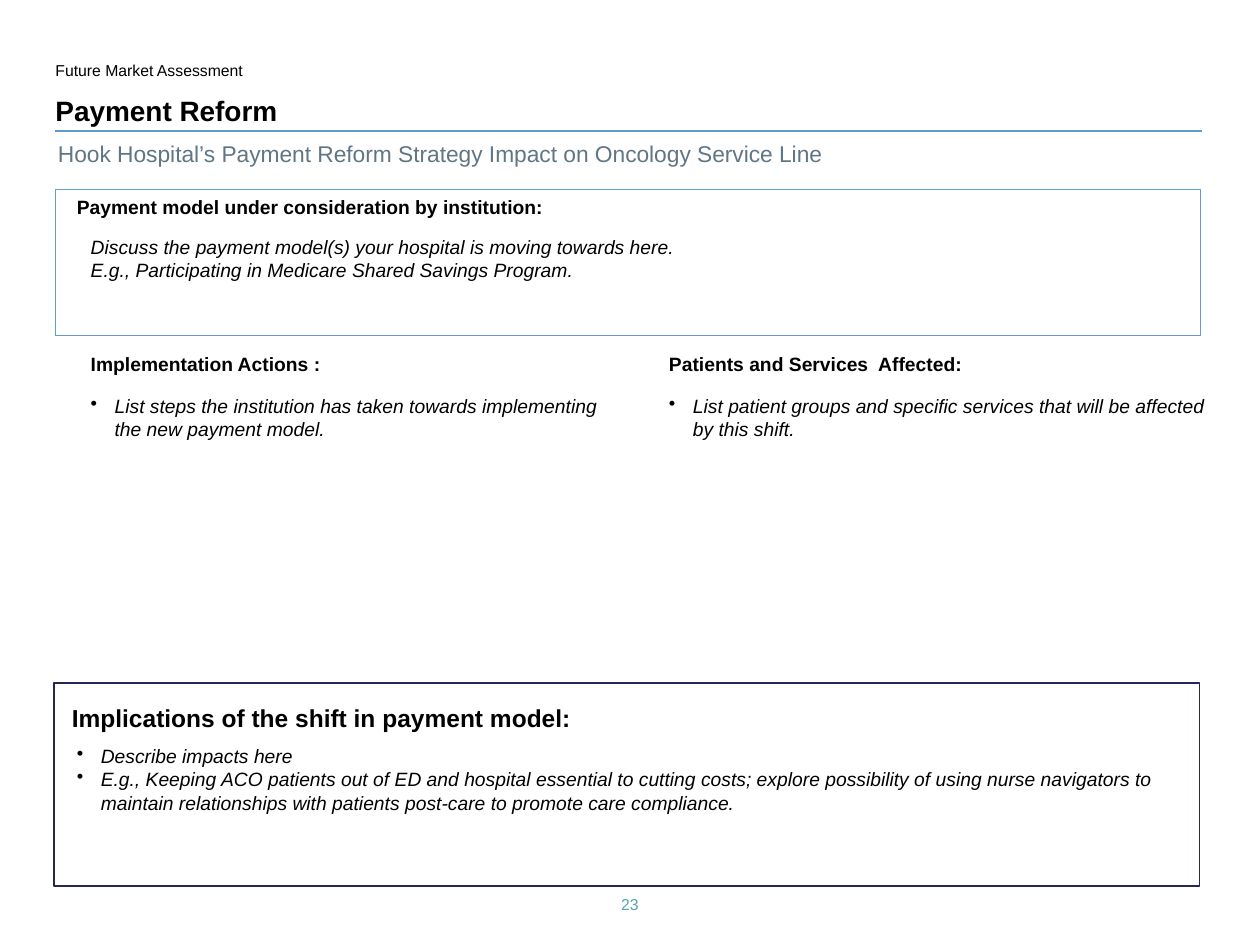
from lxml import etree
from pptx import Presentation
from pptx.dml.color import RGBColor
from pptx.enum import shapes, text
from pptx.oxml import ns
from pptx.util import Inches, Pt

COLORS = {"black": "000000", "white": "FFFFFF", "rule": "5D9ACF", "box": "629DD1",
          "navy": "242852", "subtitle": "617685", "number": "5AA2AE"}

# Content
SECTION = "Future Market Assessment"
TITLE = "Payment Reform"
SUBTITLE = "Hook Hospital’s Payment Reform Strategy Impact on Oncology Service Line"
PAGE = "23"
MODEL_HEAD = "Payment model under consideration by institution:"
MODEL = ["Discuss the payment model(s) your hospital is moving towards here.",
         "E.g., Participating in Medicare Shared Savings Program."]
COLUMNS = [
    ("Implementation Actions :",
     ["List steps the institution has taken towards implementing the new payment model."]),
    ("Patients and Services  Affected:",
     ["List patient groups and specific services that will be affected by this shift."]),
]
IMPACT_HEAD = "Implications of the shift in payment model:"
IMPACT = ["Describe impacts here",
          "E.g., Keeping ACO patients out of ED and hospital essential to cutting costs; "
          "explore possibility of using nurse navigators to maintain relationships with "
          "patients post-care to promote care compliance."]

# Layout
LEFT, WIDTH = 0.44, 9.09
COLUMN_LEFT, COLUMN_STEP = 0.67, 4.59
INDENT = 0.19


def rgb(name):
    return RGBColor.from_string(COLORS[name])


def write(sp, lines, size=11, color="black", bold=False, italic=False, inset=(0.05, 0.05),
          bullet=False, align=text.PP_ALIGN.LEFT, anchor=text.MSO_ANCHOR.TOP):
    tf = sp.text_frame
    tf.word_wrap = True
    tf.auto_size = text.MSO_AUTO_SIZE.NONE
    tf.vertical_anchor = anchor
    tf.margin_left = tf.margin_right = Inches(inset[0])
    tf.margin_top = tf.margin_bottom = Inches(inset[1])
    tf.text = "\n".join(lines)
    for p in tf.paragraphs:
        p.alignment = align
        p.font.name, p.font.size = "Arial", Pt(size)
        p.font.bold, p.font.italic = bold, italic
        p.font.color.rgb = rgb(color)
        if bullet:
            pPr = p._p.get_or_add_pPr()
            pPr.set("marL", str(Inches(INDENT)))
            pPr.set("indent", str(-Inches(INDENT)))
            bu = etree.Element(ns.qn("a:buChar"), char="•")
            pPr.insert_element_before(bu, "a:tabLst", "a:defRPr", "a:extLst")


def add_text(s, box, lines, **style):
    write(s.shapes.add_textbox(*map(Inches, box)), lines, **style)


def add_frame(s, box, color, width, fill=None):
    sp = s.shapes.add_shape(shapes.MSO_SHAPE.RECTANGLE, *map(Inches, box))
    sp.shadow.inherit = False
    if fill:
        sp.fill.solid()
        sp.fill.fore_color.rgb = rgb(fill)
    else:
        sp.fill.background()
    sp.line.color.rgb = rgb(color)
    sp.line.width = Pt(width)


def main():
    prs = Presentation()
    prs.slide_width, prs.slide_height = Inches(10), Inches(7.5)
    s = prs.slides.add_slide(prs.slide_layouts[5])

    # Header and page number
    rule = s.shapes.add_connector(shapes.MSO_CONNECTOR.STRAIGHT, Inches(LEFT), Inches(1.04),
                                  Inches(9.54), Inches(1.04))
    rule.line.color.rgb = rgb("rule")
    rule.line.width = Pt(0.75)
    etree.SubElement(rule._element.spPr, ns.qn("a:effectLst"))
    add_text(s, (4.66, 7.06, 0.68, 0.26), [PAGE], size=9, color="number",
             inset=(0.04, 0.04), align=text.PP_ALIGN.CENTER)
    add_text(s, (LEFT, 0.44, 2.89, 0.2), [SECTION], size=9, inset=(0, 0.04))
    title = s.shapes.title
    title.left, title.top, title.width, title.height = map(Inches, (LEFT, 0.74, WIDTH, 0.27))
    write(title, [TITLE], size=16, bold=True, inset=(0, 0), anchor=text.MSO_ANCHOR.BOTTOM)
    add_text(s, (0.46, 1.07, WIDTH, 0.3), [SUBTITLE], size=13, color="subtitle",
             inset=(0, 0.04))

    # Payment model
    add_frame(s, (LEFT, 1.5, WIDTH, 1.16), "box", 0.5, fill="white")
    add_text(s, (0.56, 1.5, 4.86, 0.29), [MODEL_HEAD], bold=True)
    add_text(s, (COLUMN_LEFT, 1.82, 8.75, 0.84), MODEL, italic=True)

    # Two columns
    for i, (head, items) in enumerate(COLUMNS):
        x = COLUMN_LEFT + i * COLUMN_STEP
        add_text(s, (x, 2.75, 3, 0.29), [head], bold=True)
        add_text(s, (x, 3.08, 4.37, 0.84), items, italic=True, bullet=True)

    # Implications
    add_frame(s, (0.43, 5.42, WIDTH, 1.61), "navy", 1)
    add_text(s, (0.43, 5.51, 8.46, 0.38), [IMPACT_HEAD], size=14, bold=True,
             inset=(0.14, 0.07))
    add_text(s, (0.56, 5.86, 8.7, 1.21), IMPACT, italic=True, bullet=True)

    prs.save("out.pptx")


if __name__ == "__main__":
    main()
